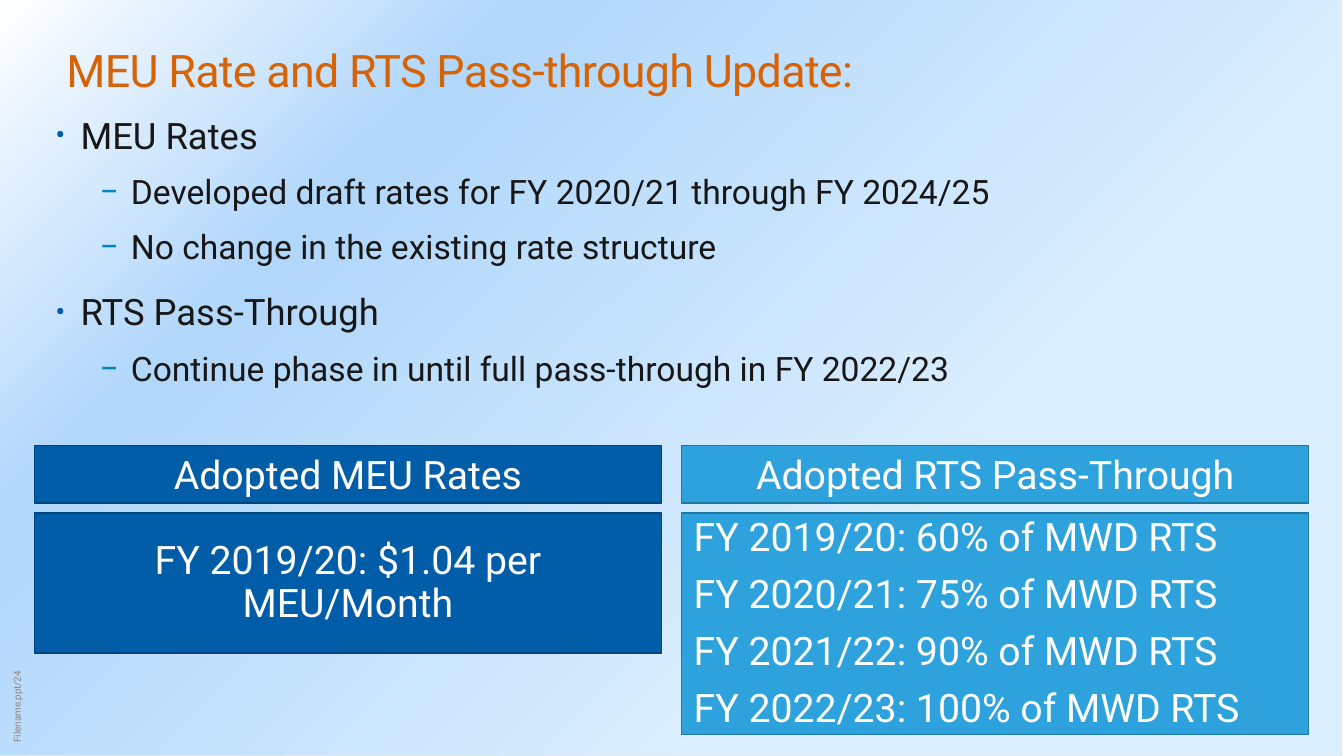
from dataclasses import dataclass

from lxml import etree
from pptx import Presentation
from pptx.dml.color import RGBColor
from pptx.enum.shapes import MSO_SHAPE as Preset
from pptx.enum.text import MSO_ANCHOR as Anchor, PP_ALIGN as Align
from pptx.oxml import parse_xml
from pptx.oxml.ns import nsdecls, qn
from pptx.util import Inches, Pt


@dataclass(frozen=True)
class Theme:
    """Colours, font and type sizes of the slide."""
    font: str = "Roboto"
    title: str = "D66406"
    body: str = "181717"
    footer: str = "8B8585"
    white: str = "FFFFFF"
    frame: str = "E7E6E6"
    backdrop: tuple = ((30, "DCEFFE"), (75, "B1D7FB"), (100, "FFFFFF"))
    navy: tuple = ("015DA8", "01457C")
    sky: tuple = ("2DA2DC", "2178A3")
    dash: str = "0088BA"
    title_size: float = 32
    topic_size: float = 26
    detail_size: float = 24
    panel_size: float = 28
    footer_size: float = 7


THEME = Theme()

TOPICS = (
    ("MEU Rates", (
        "Developed draft rates for FY 2020/21 through FY 2024/25",
        "No change in the existing rate structure",
    )),
    ("RTS Pass-Through", (
        "Continue phase in until full pass-through in FY 2022/23",
    )),
)
PASS_THROUGH = (("2019/20", 60), ("2020/21", 75), ("2021/22", 90), ("2022/23", 100))


def style_text(para, size, color):
    """Format every run of a paragraph."""
    for span in para.runs:
        span.font.name = THEME.font
        span.font.size = Pt(size)
        span.font.color.rgb = RGBColor.from_string(color)


def add_text_box(page, box):
    """Add a wrapping text box and return it."""
    shape = page.shapes.add_textbox(*map(Inches, box))
    shape.text_frame.word_wrap = True
    return shape


def add_block(page, box, line, line_width):
    """Add a flat rectangle with an outline."""
    shape = page.shapes.add_shape(Preset.RECTANGLE, *map(Inches, box))
    shape.shadow.inherit = False
    shape.line.color.rgb = RGBColor.from_string(line)
    shape.line.width = Pt(line_width)
    return shape


def add_backdrop(page, box):
    """Fill the slide with a gradient spreading from the bottom right."""
    shape = add_block(page, box, THEME.frame, 0.75)
    stops = "".join(
        f'<a:gs pos="{place * 1000}"><a:srgbClr val="{color}"/></a:gs>'
        for place, color in THEME.backdrop
    )
    gradient = parse_xml(
        f'<a:gradFill {nsdecls("a")} rotWithShape="1"><a:gsLst>{stops}</a:gsLst>'
        '<a:path path="circle"><a:fillToRect l="100000" t="100000"/></a:path></a:gradFill>'
    )
    shape.element.spPr.find(qn("a:prstGeom")).addnext(gradient)


def add_footer(page, box):
    """Place the file name vertically along the left edge."""
    shape = add_text_box(page, box)
    shape.rotation = 270
    frame = shape.text_frame
    frame.vertical_anchor = Anchor.BOTTOM
    frame.margin_left = frame.margin_right = Inches(0.05)
    frame.text = "Filename.ppt/24"
    style_text(frame.paragraphs[0], THEME.footer_size, THEME.footer)


def add_title(page, box):
    """Place the slide title."""
    frame = add_text_box(page, box).text_frame
    frame.margin_top = Inches(0.09)
    frame.text = "MEU Rate and RTS Pass-through Update:"
    para = frame.paragraphs[0]
    style_text(para, THEME.title_size, THEME.title)
    para.runs[0].font._element.set("spc", "-50")


def set_bullet(para, mark, color, left, hang, scale):
    """Give a paragraph a coloured bullet and a hanging indent."""
    props = para._p.get_or_add_pPr()
    props.set("marL", str(Inches(left)))
    props.set("indent", str(-Inches(hang)))
    tint = etree.SubElement(props, qn("a:buClr"))
    etree.SubElement(tint, qn("a:srgbClr"), val=color)
    etree.SubElement(props, qn("a:buSzPct"), val=str(scale * 1000))
    etree.SubElement(props, qn("a:buFont"), typeface=THEME.font)
    etree.SubElement(props, qn("a:buChar"), char=mark)


def add_topics(page, box):
    """Place the two-level bullet list."""
    frame = add_text_box(page, box).text_frame
    rows = []
    for topic, details in TOPICS:
        rows.append((0, topic))
        rows.extend((1, detail) for detail in details)
    frame.text = "\n".join(text for _, text in rows)
    for para, (level, _) in zip(frame.paragraphs, rows):
        para.level = level
        para.line_spacing = 0.95
        if level:
            para.space_before = Pt(12)
            set_bullet(para, "−", THEME.dash, 0.75, 0.31, 100)
            style_text(para, THEME.detail_size, THEME.body)
        else:
            para.space_before = Pt(18)
            set_bullet(para, "•", THEME.navy[0], 0.25, 0.25, 82)
            style_text(para, THEME.topic_size, THEME.body)


def add_panel_block(page, box, colors, lines, align, inset):
    """Add one coloured rectangle of a panel with its text."""
    fill, line = colors
    shape = add_block(page, box, line, 1)
    shape.fill.solid()
    shape.fill.fore_color.rgb = RGBColor.from_string(fill)
    frame = shape.text_frame
    frame.word_wrap = True
    frame.vertical_anchor = Anchor.MIDDLE
    frame.margin_left = frame.margin_right = Inches(inset)
    frame.text = "\n".join(lines)
    for para in frame.paragraphs:
        para.alignment = align
        style_text(para, THEME.panel_size, THEME.white)
    return frame


def add_panel(page, box, colors, heading, lines, align, inset):
    """Stack a heading bar over a block of adopted values."""
    left, top, width, height = box
    bar, gap = 0.57, 0.1
    add_panel_block(page, (left, top, width, bar), colors, [heading], Align.CENTER, 0.1)
    block = (left, top + bar + gap, width, height - bar - gap)
    frame = add_panel_block(page, block, colors, lines, align, inset)
    frame.margin_top = frame.margin_bottom = Inches(0.12)
    for para in frame.paragraphs:
        para.line_spacing = 0.9
        para.space_after = Pt(10.4)


def build_slide(page):
    """Place all regions of the rate update slide."""
    add_backdrop(page, (-0.02, 0, 13.33, 7.5))
    add_footer(page, (-1.17, 5.97, 2.67, 0.22))
    add_title(page, (0.56, 0.33, 12.22, 1.17))
    add_panel(page, (6.76, 4.42, 6.22, 2.87), THEME.sky, "Adopted RTS Pass-Through",
              [f"FY {year}: {share}% of MWD RTS" for year, share in PASS_THROUGH],
              Align.LEFT, 0.12)
    add_panel(page, (0.34, 4.42, 6.22, 2.06), THEME.navy, "Adopted MEU Rates",
              ["FY 2019/20: $1.04 per MEU/Month"], Align.CENTER, 0.3)
    add_topics(page, (0.45, 1.1, 12.22, 5.42))


def main():
    """Build and save the deck."""
    deck = Presentation()
    deck.slide_width, deck.slide_height = Inches(13.33), Inches(7.5)
    build_slide(deck.slides.add_slide(deck.slide_layouts[6]))
    deck.save("out.pptx")


if __name__ == "__main__":
    main()
